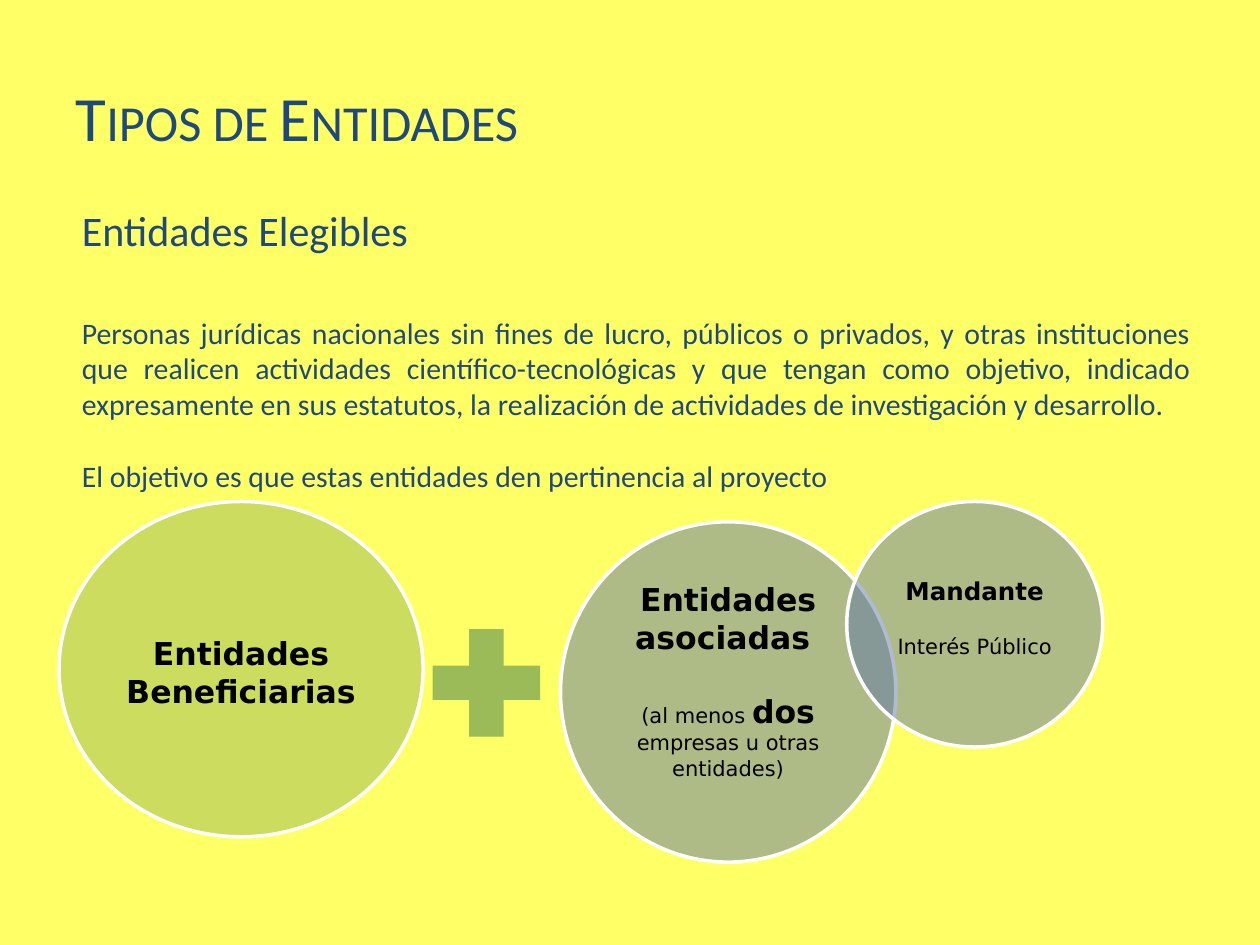
from dataclasses import dataclass

from pptx import Presentation, util as u
from pptx.dml.color import RGBColor
from pptx.enum import shapes, text
from pptx.oxml.ns import qn
from lxml import etree

YELLOW = RGBColor(0xFF, 0xFF, 0x66)
NAVY = RGBColor(0x1F, 0x49, 0x7D)
GREEN = RGBColor(0x9B, 0xBB, 0x59)
SLATE = RGBColor(0x61, 0x79, 0xA8)
WHITE = RGBColor(0xFF, 0xFF, 0xFF)
BLACK = RGBColor(0, 0, 0)
HEADING_FONT = "Calibri"
CIRCLE_FONT = "DejaVu Sans"


@dataclass
class Span:
    words: str
    size: float
    bold: bool = False


@dataclass
class Para:
    spans: list[Span]
    align: text.PP_ALIGN = text.PP_ALIGN.CENTER
    before: float = 0


@dataclass
class Circle:
    left: float
    top: float
    width: float
    height: float
    fill: RGBColor
    paras: list[Para]
    inset_top: float = 0
    inset_bottom: float = 0


BODY = [
    Para([Span("Entidades Elegibles", 24)], text.PP_ALIGN.LEFT),
    Para([Span("Personas jurídicas nacionales sin fines de lucro, públicos o "
               "privados, y otras instituciones que realicen actividades "
               "científico-tecnológicas y que tengan como objetivo, indicado "
               "expresamente en sus estatutos, la realización de actividades "
               "de investigación y desarrollo. ", 17)],
         text.PP_ALIGN.JUSTIFY, before=34),
    Para([Span("El objetivo es que estas entidades den pertinencia al proyecto", 17)],
         text.PP_ALIGN.JUSTIFY, before=20.5),
]

BENEFICIARIES = Circle(1.19, 10.11, 7.34, 6.76, GREEN, [
    Para([Span("Entidades", 18, True)]),
    Para([Span("Beneficiarias", 18, True)]),
], inset_top=0.12)

ASSOCIATES = Circle(11.3, 10.52, 6.76, 6.86, SLATE, [
    Para([Span("Entidades asociadas ", 18, True)]),
    Para([Span("(al menos ", 12), Span("dos", 18, True),
          Span(" empresas u otras entidades)", 12)], before=21),
], inset_bottom=0.48)

PRINCIPAL = Circle(17.07, 10.11, 5.16, 4.95, SLATE, [
    Para([Span("Mandante", 14, True)]),
    Para([Span("Interés Público", 12)], before=16.5),
], inset_bottom=0.28)


def write_paras(frame, paras: list[Para], font: str, color: RGBColor) -> None:
    frame.word_wrap = True
    for index, item in enumerate(paras):
        para = frame.paragraphs[0] if index == 0 else frame.add_paragraph()
        para.alignment = item.align
        para.space_before = u.Pt(item.before)
        for span in item.spans:
            run = para.add_run()
            run.text = span.words
            run.font.name = font
            run.font.size = u.Pt(span.size)
            run.font.bold = span.bold
            run.font.color.rgb = color


def add_title(slide) -> None:
    title = slide.shapes.title
    title.left, title.top = u.Cm(1.27), u.Cm(0.76)
    title.width, title.height = u.Cm(19.84), u.Cm(3.18)
    frame = title.text_frame
    frame.auto_size = text.MSO_AUTO_SIZE.NONE
    frame.vertical_anchor = text.MSO_ANCHOR.MIDDLE
    write_paras(frame, [Para([Span("Tipos de Entidades", 36)], text.PP_ALIGN.LEFT)],
                HEADING_FONT, NAVY)
    frame.paragraphs[0].runs[0].font._element.set("cap", "small")


def add_body(slide) -> None:
    box = slide.shapes.add_textbox(u.Cm(1.4), u.Cm(4), u.Cm(22.86), u.Cm(6.99))
    write_paras(box.text_frame, BODY, HEADING_FONT, NAVY)


def add_circle(slide, circle: Circle) -> None:
    """Draw a half-transparent, white-rimmed ellipse with its text."""
    oval = slide.shapes.add_shape(
        shapes.MSO_SHAPE.OVAL, u.Cm(circle.left), u.Cm(circle.top),
        u.Cm(circle.width), u.Cm(circle.height))
    oval.shadow.inherit = False
    oval.fill.solid()
    oval.fill.fore_color.rgb = circle.fill
    tint = oval._element.spPr.find(qn("a:solidFill"))[0]
    etree.SubElement(tint, qn("a:alpha")).set("val", "50000")
    oval.line.color.rgb = WHITE
    oval.line.width = u.Pt(2)
    frame = oval.text_frame
    frame.vertical_anchor = text.MSO_ANCHOR.MIDDLE
    frame.margin_left = frame.margin_right = 0
    frame.margin_top = u.Cm(circle.inset_top)
    frame.margin_bottom = u.Cm(circle.inset_bottom)
    write_paras(frame, circle.paras, CIRCLE_FONT, BLACK)


def add_plus(slide) -> None:
    plus = slide.shapes.add_shape(
        shapes.MSO_SHAPE.MATH_PLUS, u.Cm(8.33), u.Cm(12.29), u.Cm(2.95), u.Cm(2.95))
    plus.shadow.inherit = False
    plus.fill.solid()
    plus.fill.fore_color.rgb = GREEN
    plus.line.fill.background()


def main() -> None:
    deck = Presentation()
    deck.slide_width, deck.slide_height = u.Cm(25.4), u.Cm(19.05)
    slide = deck.slides.add_slide(deck.slide_layouts.get_by_name("Title Only"))
    slide.background.fill.solid()
    slide.background.fill.fore_color.rgb = YELLOW
    add_title(slide)
    add_body(slide)
    add_circle(slide, BENEFICIARIES)
    add_circle(slide, ASSOCIATES)
    add_plus(slide)
    add_circle(slide, PRINCIPAL)
    deck.save("out.pptx")


if __name__ == "__main__":
    main()
